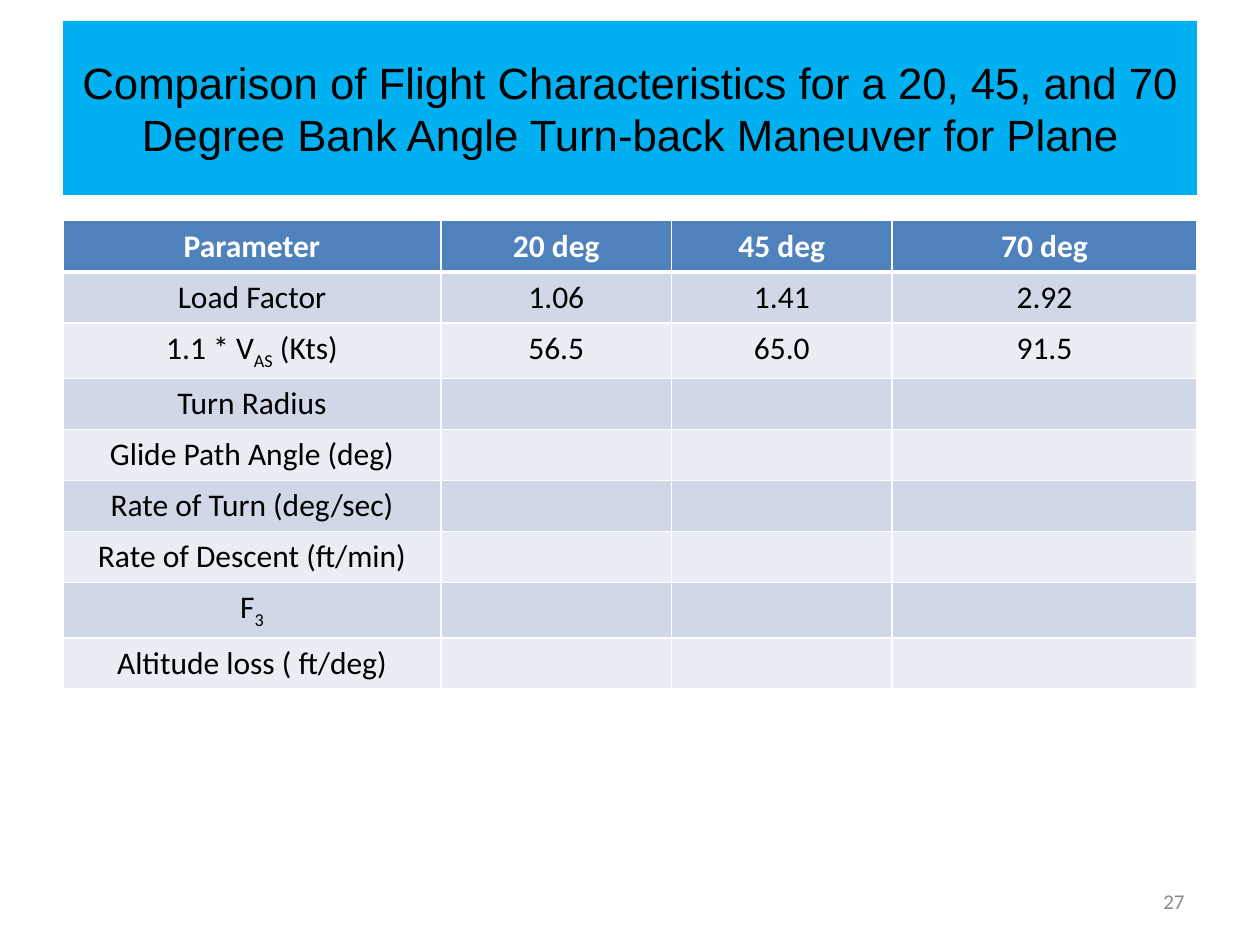
import pptx
import pptx.dml.color
import pptx.enum.text
import pptx.oxml
import pptx.oxml.ns
import pptx.util
from pptx.util import Cm

COLORS = {
    "banner": "00B0F0",
    "header": "4F81BD",
    "odd_row": "D0D8E8",
    "even_row": "E9EDF4",
    "white": "FFFFFF",
    "black": "000000",
    "page": "898989",
}
ALIGN = pptx.enum.text.PP_ALIGN
MIDDLE = pptx.enum.text.MSO_ANCHOR.MIDDLE

TITLE = ("Comparison of Flight Characteristics for a 20, 45, and 70 "
         "Degree Bank Angle Turn-back Maneuver for Plane")
# A parameter is a label, or a (base, subscript, rest) triple
COMPARISON = [
    ["Parameter", "20 deg", "45 deg", "70 deg"],
    ["Load Factor", "1.06", "1.41", "2.92"],
    [("1.1 * V", "AS", " (Kts)"), "56.5", "65.0", "91.5"],
    ["Turn Radius"],
    ["Glide Path Angle (deg)"],
    ["Rate of Turn (deg/sec)"],
    ["Rate of Descent (ft/min)"],
    [("F", "3", "")],
    ["Altitude loss ( ft/deg)"],
]
COLUMN_SHARES = [3, 1.83, 1.75, 2.42]


def rgb(name):
    return pptx.dml.color.RGBColor.from_string(COLORS[name])


def format_paragraph(paragraph, align, size, font, color, bold=False):
    paragraph.alignment = align
    for run in paragraph.runs:
        run.font.size = pptx.util.Pt(size)
        run.font.name = font
        run.font.bold = bold
        run.font.color.rgb = rgb(color)


def fill_with(part, color):
    part.fill.solid()
    part.fill.fore_color.rgb = rgb(color)


def place(part, box):
    part.left, part.top, part.width, part.height = box


def write_parameter(paragraph, label):
    if isinstance(label, str):
        paragraph.text = label
        return
    for position, piece in enumerate(label):
        if piece:
            run = paragraph.add_run()
            run.text = piece
            if position == 1:
                run.font._element.set("baseline", "-25000")


def set_borders(cell, top, bottom):
    properties = cell._tc.get_or_add_tcPr()
    widths = {"lnL": 1, "lnR": 1, "lnT": top, "lnB": bottom}
    for index, (side, points) in enumerate(widths.items()):
        properties.insert(index, pptx.oxml.parse_xml(
            f'<a:{side} {pptx.oxml.ns.nsdecls("a")} w="{pptx.util.Pt(points)}">'
            f'<a:solidFill><a:srgbClr val="{COLORS["white"]}"/></a:solidFill>'
            f'</a:{side}>'))


# Title banner
def add_title(slide, box):
    title = slide.shapes.title
    place(title, box)
    fill_with(title, "banner")
    frame = title.text_frame
    frame.text = TITLE
    frame.word_wrap = True
    frame.auto_size = pptx.enum.text.MSO_AUTO_SIZE.NONE
    frame.vertical_anchor = MIDDLE
    format_paragraph(frame.paragraphs[0], ALIGN.CENTER, 25, "Arial", "black")


# Comparison table
def add_comparison(slide, box):
    width, height = box[2:]
    table = slide.shapes.add_table(
        len(COMPARISON), len(COLUMN_SHARES), *box).table
    for column, share in zip(table.columns, COLUMN_SHARES):
        column.width = int(width * share / sum(COLUMN_SHARES))
    for row in table.rows:
        row.height = int(height / len(COMPARISON))

    for r, entries in enumerate(COMPARISON):
        is_header = r == 0
        row_color = "header" if is_header else "odd_row" if r % 2 else "even_row"
        for c, cell in enumerate(table.rows[r].cells):
            fill_with(cell, row_color)
            set_borders(cell, top=3 if r == 1 else 1, bottom=3 if is_header else 1)
            if c < len(entries):
                paragraph = cell.text_frame.paragraphs[0]
                write_parameter(paragraph, entries[c])
                format_paragraph(paragraph, ALIGN.CENTER, 18, "Calibri",
                                 "white" if is_header else "black", is_header)


# Page number
def add_page_number(slide, box):
    frame = slide.shapes.add_textbox(*box).text_frame
    frame.text = "27"
    frame.word_wrap = True
    frame.vertical_anchor = MIDDLE
    format_paragraph(frame.paragraphs[0], ALIGN.RIGHT, 12, "Calibri", "page")


def main():
    deck = pptx.Presentation()
    deck.slide_width, deck.slide_height = Cm(25.4), Cm(19.05)
    slide = deck.slides.add_slide(deck.slide_layouts[5])

    margin, content_width = Cm(1.27), Cm(22.86)
    add_title(slide, (margin, Cm(0.42), content_width, Cm(3.51)))
    add_comparison(slide, (margin, Cm(4.45), content_width, Cm(9.2)))
    add_page_number(slide, (Cm(18.2), Cm(17.66), Cm(5.93), Cm(1.01)))
    deck.save("out.pptx")


if __name__ == "__main__":
    main()
